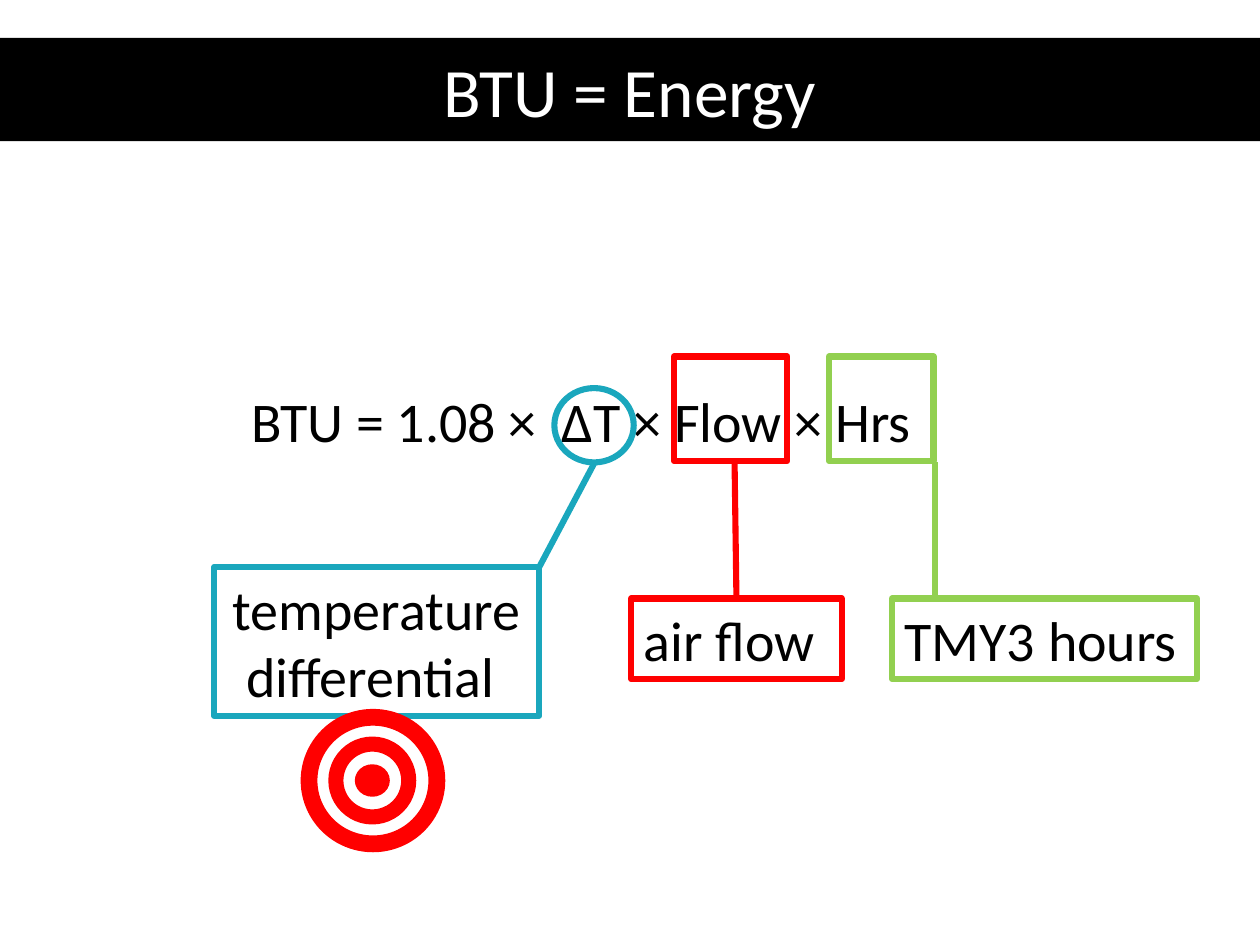
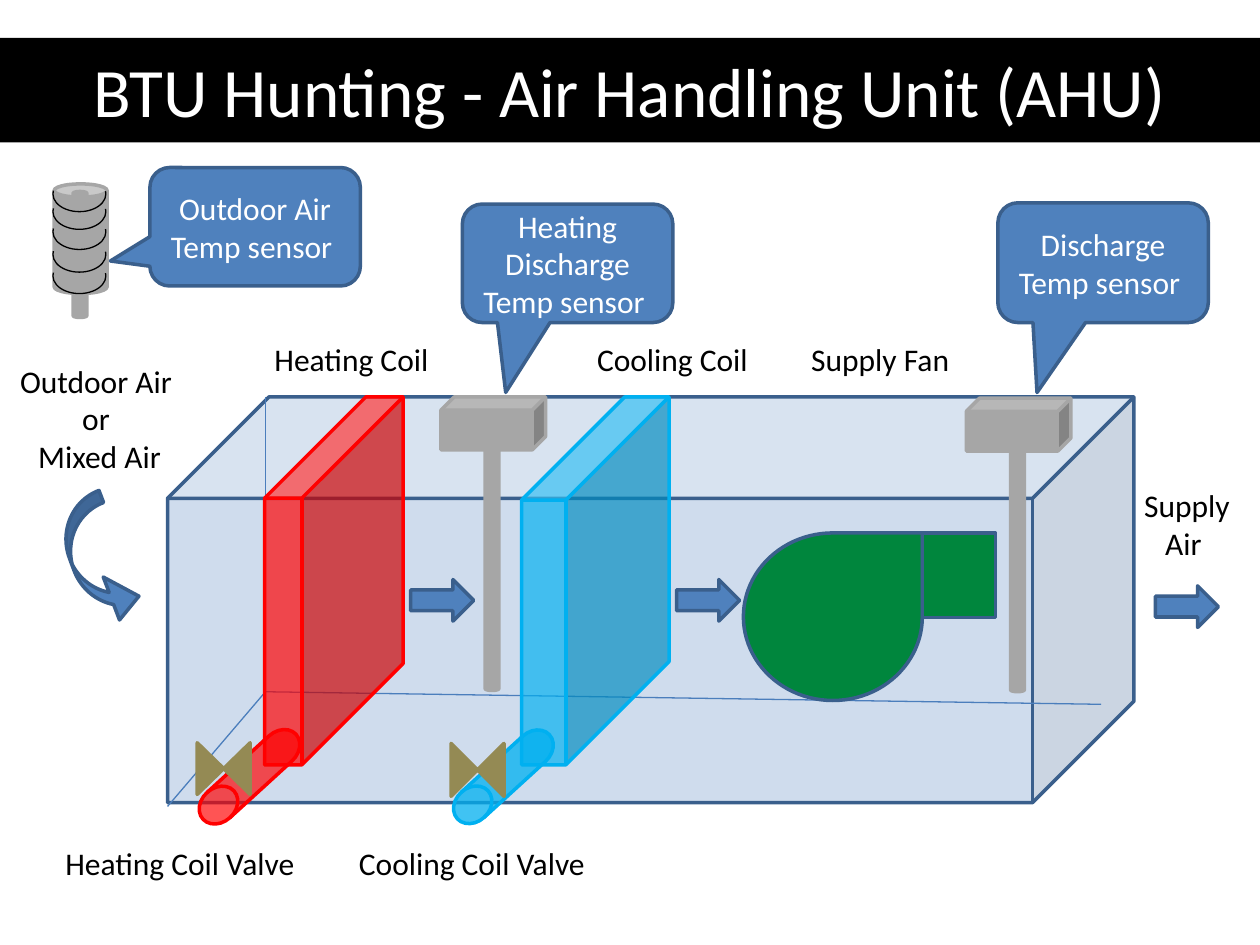
"""Build two slides on BTU energy and the air handling unit."""
from dataclasses import dataclass
from typing import Optional

from lxml import etree
from pptx import Presentation
from pptx import util as u
from pptx.dml import color
from pptx.enum import shapes, text
from pptx.oxml import ns

COLOURS = {
    "black": "000000", "white": "FFFFFF", "red": "FF0000", "lime": "92D050",
    "teal": "1AA7BD", "blue": "4F81BD", "navy": "3A5F8C", "edge": "4B7EBC",
    "fan": "00863D", "cold": "00B0F0", "brass": "948A54", "steel": "A6A6A6",
}
FONT = "Calibri"
KIND = shapes.MSO_SHAPE
ALIGN = text.PP_ALIGN
Box = tuple[float, float, float, float]
Point = tuple[float, float]


@dataclass(frozen=True)
class Part:
    kind: KIND
    at: Box
    fill: Optional[str] = "blue"
    line: str = "navy"
    weight: float = 2
    adjust: tuple[float, ...] = ()
    turn: float = 0
    opacity: int = 100


@dataclass(frozen=True)
class Label:
    words: str
    at: Box
    align: ALIGN = ALIGN.LEFT


@dataclass(frozen=True)
class Term:
    marker: KIND
    marked: Box
    start: Point
    end: Point
    meaning: str
    at: Box
    hue: str
    align: ALIGN = ALIGN.LEFT


@dataclass(frozen=True)
class Callout:
    words: str
    at: Box
    tip: Point


@dataclass(frozen=True)
class Coil:
    at: Box
    depth: float
    pipe: Box
    pipe_opacity: int
    valve: Box
    hue: str


def rgb(name: str) -> color.RGBColor:
    return color.RGBColor.from_string(COLOURS[name])


def lengths(values: tuple[float, ...]) -> list[u.Length]:
    return [u.Inches(value) for value in values]


def write(frame, words: str, size: float, hue: str, align: ALIGN) -> None:
    frame.text = words
    frame.word_wrap = True
    for paragraph in frame.paragraphs:
        paragraph.alignment = align
        for run in paragraph.runs:
            run.font.name = FONT
            run.font.size = u.Pt(size)
            run.font.color.rgb = rgb(hue)


def draw(slide, part: Part):
    shape = slide.shapes.add_shape(part.kind, *lengths(part.at))
    shape.shadow.inherit = False
    shape.rotation = part.turn
    for index, value in enumerate(part.adjust):
        shape.adjustments[index] = value
    if part.fill is None:
        shape.fill.background()
    else:
        shape.fill.solid()
        shape.fill.fore_color.rgb = rgb(part.fill)
        if part.opacity < 100:
            solid = shape._element.spPr.find(ns.qn("a:solidFill"))
            alpha = etree.SubElement(solid[0], ns.qn("a:alpha"))
            alpha.set("val", str(part.opacity * 1000))
    shape.line.color.rgb = rgb(part.line)
    shape.line.width = u.Pt(part.weight)
    return shape


def connect(slide, start: Point, end: Point, hue: str, weight: float):
    connector = slide.shapes.add_connector(
        shapes.MSO_CONNECTOR.STRAIGHT, *lengths(start + end))
    connector.line.color.rgb = rgb(hue)
    connector.line.width = u.Pt(weight)
    etree.SubElement(connector._element.spPr, ns.qn("a:effectLst"))
    return connector


def add_label(slide, label: Label, size: float = 18):
    box = slide.shapes.add_textbox(*lengths(label.at))
    write(box.text_frame, label.words, size, "black", label.align)
    return box


def add_titled_slide(deck, words: str, height: float):
    slide = deck.slides.add_slide(deck.slide_layouts[5])
    title = slide.shapes.title
    title.left, title.top, title.width, title.height = lengths((0, 0.3, 10, height))
    title.fill.solid()
    title.fill.fore_color.rgb = rgb("black")
    write(title.text_frame, words, 39.6, "white", ALIGN.CENTER)
    title.text_frame.vertical_anchor = text.MSO_ANCHOR.MIDDLE
    return slide


def add_term(slide, term: Term) -> None:
    draw(slide, Part(term.marker, term.marked, None, term.hue, 3.5))
    leader = connect(slide, term.start, term.end, term.hue, 3.5)
    meaning = draw(slide, Part(KIND.RECTANGLE, term.at, None, term.hue, 3.5))
    write(meaning.text_frame, term.meaning, 32, "black", term.align)
    middle = term.at[0] + term.at[2] / 2
    if abs(middle - term.end[0]) < 0.02:
        leader.end_connect(meaning, 0)


def add_callout(slide, callout: Callout) -> None:
    bubble = draw(slide, Part(KIND.ROUNDED_RECTANGULAR_CALLOUT, callout.at,
                              adjust=callout.tip + (0.167,)))
    write(bubble.text_frame, callout.words, 18, "white", ALIGN.CENTER)
    bubble.text_frame.vertical_anchor = text.MSO_ANCHOR.MIDDLE


def add_coil(slide, coil: Coil) -> None:
    draw(slide, Part(KIND.CUBE, coil.at, coil.hue, coil.hue,
                     adjust=(coil.depth,), opacity=68))
    draw(slide, Part(KIND.FLOWCHART_DIRECT_ACCESS_STORAGE, coil.pipe, coil.hue,
                     coil.hue, turn=137.6, opacity=coil.pipe_opacity))
    draw(slide, Part(KIND.FLOWCHART_COLLATE, coil.valve, "brass", "brass", turn=90))


def add_probe(slide, left: float, top: float) -> None:
    stem = (left + 0.35, top + 0.25, 0.11, 2.08)
    draw(slide, Part(KIND.CAN, stem, "steel", "steel"))
    draw(slide, Part(KIND.CUBE, (left, top, 0.83, 0.42), "steel", "steel"))


def add_outdoor_sensor(slide) -> None:
    for at in ((0.43, 1.46, 0.42, 0.87), (0.58, 1.52, 0.11, 1)):
        draw(slide, Part(KIND.CAN, at, "steel", "steel"))
    for top in (1.4, 1.54, 1.7, 1.88, 2.05):
        draw(slide, Part(KIND.ARC, (0.42, top, 0.42, 0.28), None, "black", 0.75,
                         (212.33, 112.4)))


def build_energy(deck) -> None:
    slide = add_titled_slide(deck, "BTU = Energy", 0.82)
    formula = add_label(slide, Label("BTU = 1.08 ×  ΔT × Flow × Hrs",
                                     (0.5, 1.75, 9, 4.96), ALIGN.CENTER), 32)
    formula.text_frame.margin_top = u.Inches(1.32)
    formula.text_frame.margin_right = u.Inches(0.87)

    terms = (
        Term(KIND.RECTANGLE, (5.35, 2.83, 0.9, 0.83), (5.83, 3.67), (5.85, 4.75),
             "air flow", (5.01, 4.75, 1.67, 0.64), "red"),
        Term(KIND.RECTANGLE, (6.58, 2.83, 0.83, 0.83), (7.42, 3.67), (7.42, 4.75),
             "TMY3 hours", (7.08, 4.75, 2.42, 0.64), "lime"),
        Term(KIND.OVAL, (4.4, 3.08, 0.63, 0.59), (4.72, 3.67), (4.28, 4.5),
             "temperature differential ", (1.7, 4.5, 2.58, 1.18), "teal",
             ALIGN.CENTER),
    )
    for term in terms:
        add_term(slide, term)

    target = (
        Part(KIND.OVAL, (2.83, 6.08, 0.25, 0.23), "red", "red"),
        Part(KIND.DONUT, (2.62, 5.86, 0.67, 0.67), "red", "red", adjust=(0.137,)),
        Part(KIND.DONUT, (2.4, 5.64, 1.12, 1.11), "red", "red", adjust=(0.095,)),
    )
    for ring in target:
        draw(slide, ring)


def build_air_handler(deck) -> None:
    slide = add_titled_slide(deck, "BTU Hunting - Air Handling Unit (AHU)", 0.83)
    draw(slide, Part(KIND.CUBE, (1.33, 3.15, 7.67, 3.22), opacity=27))
    hidden_edges = (((8.74, 5.59), (2.09, 5.49)), ((2.11, 3.15), (2.11, 5.51)),
                    ((2.09, 5.51), (1.33, 6.4)))
    for start, end in hidden_edges:
        connect(slide, start, end, "edge", 0.75)

    draw(slide, Part(KIND.TEAR, (5.9, 4.23, 1.42, 1.33), "fan"))
    draw(slide, Part(KIND.RECTANGLE, (7.32, 4.23, 0.58, 0.67), "fan"))
    draw(slide, Part(KIND.CURVED_RIGHT_ARROW, (0.58, 3.93, 0.41, 1.08),
                     adjust=(0.25, 0.89, 0.515), turn=339.3))
    for left, top in ((3.26, 4.6), (5.37, 4.6), (9.17, 4.65)):
        draw(slide, Part(KIND.RIGHT_ARROW, (left, top, 0.5, 0.33)))

    coils = (
        Coil((2.1, 3.15, 1.1, 2.92), 0.731, (1.48, 6.03, 1, 0.27), 67,
             (1.57, 5.89, 0.41, 0.42), "red"),
        Coil((4.14, 3.15, 1.17, 2.92), 0.7, (3.5, 6.03, 0.99, 0.27), 75,
             (3.58, 5.9, 0.42, 0.42), "cold"),
    )
    for coil in coils:
        add_coil(slide, coil)

    labels = (
        Label("Heating Coil", (2.08, 2.65, 1.58, 0.4)),
        Label("Cooling Coil", (4.64, 2.65, 1.5, 0.42)),
        Label("Supply Fan", (6.34, 2.65, 1.33, 0.42)),
        Label("Heating Coil Valve", (0.42, 6.65, 2.08, 0.4)),
        Label("Cooling Coil Valve", (2.75, 6.65, 2.08, 0.4)),
        Label("Outdoor Air \nor \nMixed Air", (0, 2.82, 1.58, 1.01), ALIGN.CENTER),
        Label("Supply Air ", (8.92, 3.81, 1, 0.71), ALIGN.CENTER),
    )
    for label in labels:
        add_label(slide, label)

    callouts = (
        Callout("Heating Discharge Temp sensor ", (3.67, 1.62, 1.67, 0.94),
                (-0.294, 1.09)),
        Callout("Discharge Temp sensor ", (7.92, 1.61, 1.67, 0.95), (-0.314, 1.085)),
        Callout("Outdoor Air Temp sensor ", (1.19, 1.33, 1.67, 0.94),
                (-0.688, 0.289)),
    )
    for callout in callouts:
        add_callout(slide, callout)

    add_probe(slide, 3.5, 3.15)
    add_probe(slide, 7.67, 3.16)
    add_outdoor_sensor(slide)


def main() -> None:
    deck = Presentation()
    deck.slide_width, deck.slide_height = lengths((10, 7.5))
    build_energy(deck)
    build_air_handler(deck)
    deck.save("out.pptx")


if __name__ == "__main__":
    main()
